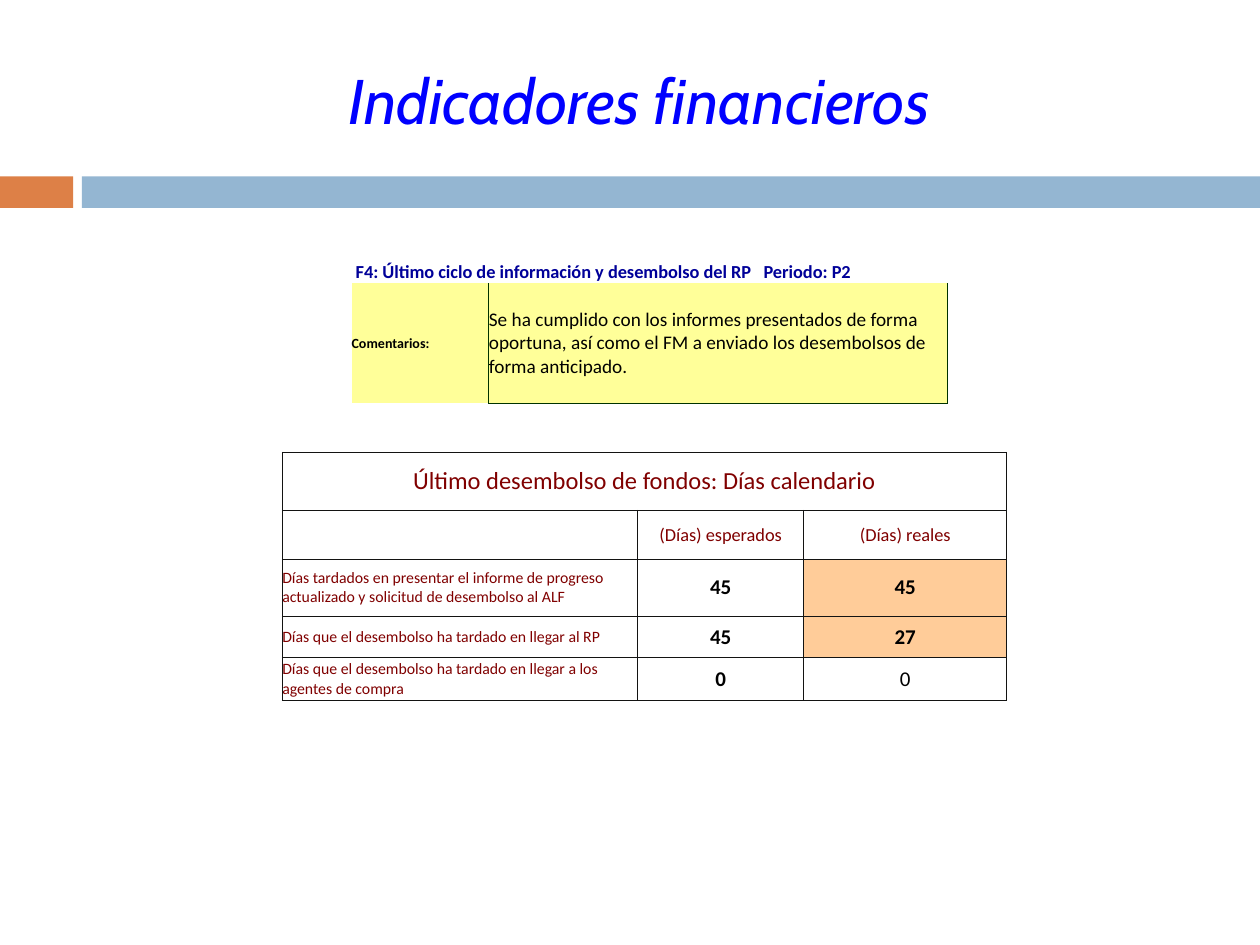
from dataclasses import dataclass

from lxml import etree
from pptx import Presentation
from pptx.dml.color import RGBColor
from pptx.enum.shapes import MSO_SHAPE
from pptx.enum.text import MSO_ANCHOR, PP_ALIGN
from pptx.oxml.ns import qn
from pptx.util import Inches, Pt

RECT = MSO_SHAPE.RECTANGLE
MIDDLE, BOTTOM = MSO_ANCHOR.MIDDLE, MSO_ANCHOR.BOTTOM
LEFT, CENTER = PP_ALIGN.LEFT, PP_ALIGN.CENTER
COLS, ROWS = 100, 75
UNIT = Inches(0.1)
PLAIN = "{2D5ABB26-0587-4C30-8999-92F81FD0307C}"


@dataclass(frozen=True)
class Theme:
    head: str = "Cabin"
    body: str = "Calibri"
    blue: str = "0000FF"
    navy: str = "000099"
    wine: str = "800000"
    black: str = "000000"
    orange: str = "DD8047"
    sky: str = "94B6D2"
    yellow: str = "FFFF99"
    peach: str = "FFCC99"
    white: str = "FFFFFF"
    green: str = "003300"
    line: str = "131312"
    title: float = 36
    large: float = 14
    value: float = 12
    note: float = 11
    label: float = 10.5
    small: float = 9
    tiny: float = 8


T = Theme()


@dataclass(frozen=True)
class Box:
    x: float
    y: float
    w: float
    h: float

    def place(self) -> tuple[int, ...]:
        return tuple(round(n * UNIT) for n in (self.x, self.y, self.w, self.h))


@dataclass(frozen=True)
class Cell:
    text: str = ""
    size: float = T.label
    color: str = T.wine
    bold: bool = False
    align: PP_ALIGN = LEFT
    anchor: MSO_ANCHOR = MIDDLE
    fill: str = ""
    sides: str = "LRTB"
    edge: str = T.line
    span: int = 1


def write(frame, text: str, *, size: float, color: str, font: str = T.body,
          bold: bool = False, italic: bool = False, align: PP_ALIGN = LEFT) -> None:
    para = frame.paragraphs[0]
    para.alignment = align
    face = para.font
    if text:
        run = para.add_run()
        run.text = text
        face = run.font
    face.name, face.size = font, Pt(size)
    face.bold, face.italic = bold, italic
    face.color.rgb = RGBColor.from_string(color)


def bar(slide, box: Box, color: str) -> None:
    shape = slide.shapes.add_shape(RECT, *box.place())
    shape.shadow.inherit = False
    shape.fill.solid()
    shape.fill.fore_color.rgb = RGBColor.from_string(color)
    shape.line.fill.background()


def border(cell, sides: str, color: str) -> None:
    props = cell._tc.get_or_add_tcPr()
    for i, side in enumerate(sides):
        line = etree.Element(qn(f"a:ln{side}"), w=str(Pt(0.5)))
        fill = etree.SubElement(line, qn("a:solidFill"))
        etree.SubElement(fill, qn("a:srgbClr"), val=color)
        props.insert(i, line)


def paint(cell, item: Cell) -> None:
    cell.margin_left = cell.margin_right = cell.margin_top = cell.margin_bottom = 0
    cell.vertical_anchor = item.anchor
    if item.fill:
        cell.fill.solid()
        cell.fill.fore_color.rgb = RGBColor.from_string(item.fill)
    else:
        cell.fill.background()
    border(cell, item.sides, item.edge)
    write(cell.text_frame, item.text, size=item.size, color=item.color,
          bold=item.bold, align=item.align)


def grid(slide, x: float, y: float, wide: list[float], high: list[float],
         rows: list[list[Cell]]) -> None:
    box = Box(x, y, sum(wide), sum(high))
    table = slide.shapes.add_table(len(high), len(wide), *box.place()).table
    table.first_row = table.horz_banding = False
    table._tbl.tblPr[0].text = PLAIN
    for col, size in zip(table.columns, wide):
        col.width = round(size * UNIT)
    for row, size in zip(table.rows, high):
        row.height = round(size * UNIT)
    for r, items in enumerate(rows):
        c = 0
        for item in items:
            paint(table.cell(r, c), item)
            if item.span > 1:
                last = table.cell(r, c + item.span - 1)
                table.cell(r, c).merge(last)
                border(last, item.sides, item.edge)
            c += item.span


def head(text: str) -> Cell:
    return Cell(text, align=CENTER)


def value(text: str, bold: bool = True, fill: str = "") -> Cell:
    return Cell(text, T.value, T.black, bold, CENTER, fill=fill)


def days(text: str, due: str, real: Cell) -> list[Cell]:
    return [Cell(text, T.small), value(due), real]


def main() -> None:
    deck = Presentation()
    deck.slide_width, deck.slide_height = COLS * UNIT, ROWS * UNIT
    slide = deck.slides.add_slide(deck.slide_layouts[5])

    bar(slide, Box(0, 14, 5.8, 2.5), T.orange)
    bar(slide, Box(6.5, 14, COLS - 6.5, 2.5), T.sky)

    title = slide.shapes.title
    title.left, title.top, title.width, title.height = Box(6.7, 2.5, 89.2, 10.8).place()
    title.text_frame.vertical_anchor = MIDDLE
    write(title.text_frame, "Indicadores financieros ", size=T.title, color=T.blue,
          font=T.head, italic=True, align=CENTER)

    grid(slide, 27.9, 17.8, [10.9, 36.4], [4.7, 9.5], [
        [Cell(" F4: Último ciclo de información y desembolso del RP   Periodo: P2",
              color=T.navy, bold=True, anchor=BOTTOM, sides="", span=2)],
        [Cell("Comentarios:", T.tiny, T.black, True, fill=T.yellow,
              sides="R", edge=T.green),
         Cell("Se ha cumplido con los informes presentados de forma oportuna, "
              "así como el FM a enviado los desembolsos de forma anticipado.",
              T.note, T.black, fill=T.yellow, sides="LRB", edge=T.green)],
    ])

    grid(slide, 22.4, 35.9, [28.2, 13.2, 16.1], [4.6, 3.9, 4.5, 3.3, 3.4], [
        [Cell(" Último desembolso de fondos: Días calendario ", T.large,
              align=CENTER, span=3)],
        [Cell(), head(" (Días) esperados "), head(" (Días) reales ")],
        days("Días tardados en presentar el informe de progreso actualizado "
             "y solicitud de desembolso al ALF", "45", value("45", fill=T.peach)),
        days("Días que el desembolso ha tardado en llegar al RP", "45",
             value("27", fill=T.peach)),
        days("Días que el desembolso ha tardado en llegar a los agentes de compra",
             "0", value("0", bold=False, fill=T.white)),
    ])

    deck.save("out.pptx")


if __name__ == "__main__":
    main()
